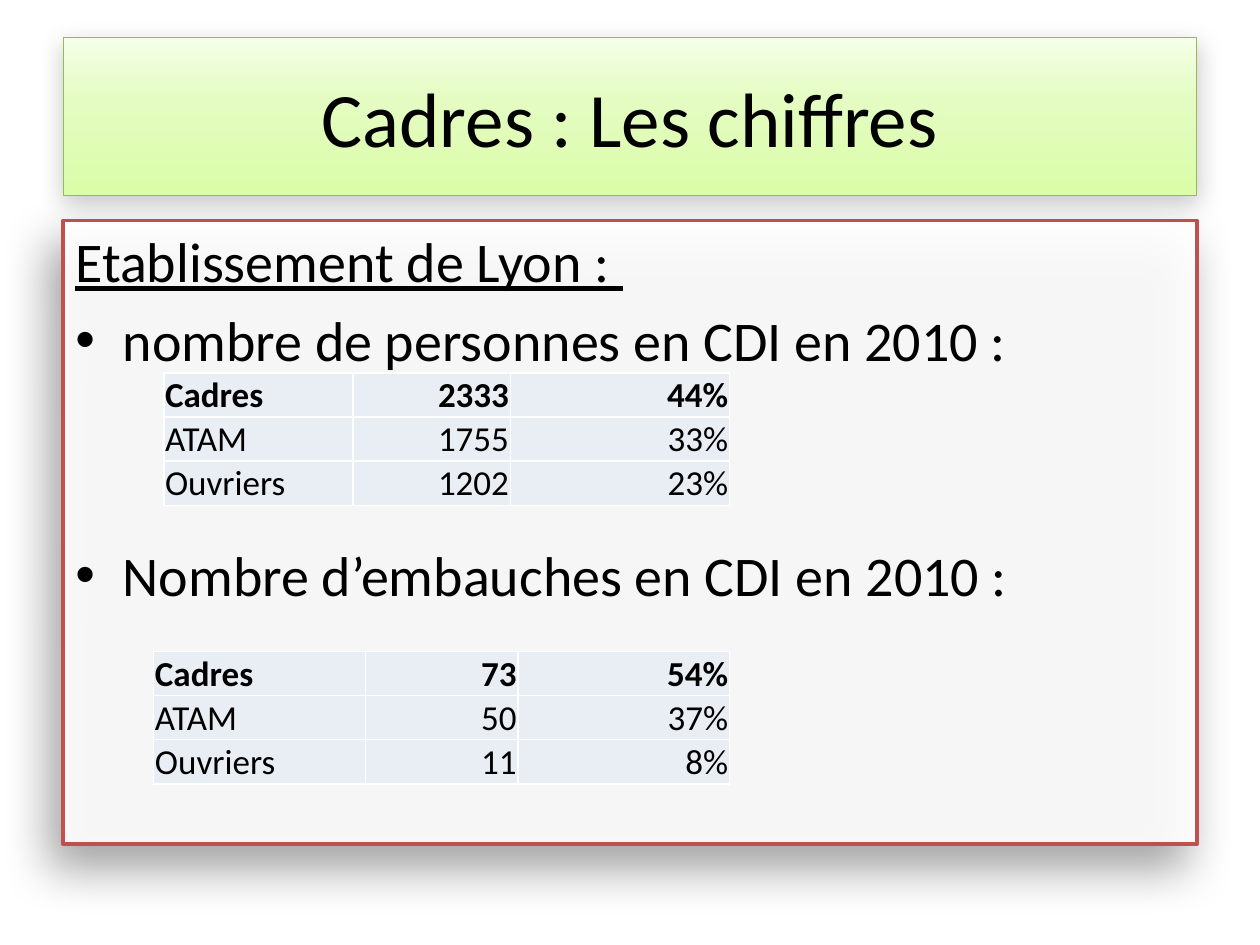
from lxml.etree import SubElement
from pptx import Presentation
from pptx.dml.color import RGBColor as RGB
from pptx.enum.shapes import MSO_SHAPE as Shape
from pptx.enum.text import MSO_ANCHOR as Anchor, PP_ALIGN as Align
from pptx.oxml.ns import qn
from pptx.util import Inches, Pt

TITLE = "Cadres : Les chiffres"
LINES = [
    dict(text="Etablissement de Lyon : ", line=True, before=6.4),
    dict(text="nombre de personnes en CDI en 2010 :", bullet=True, before=6.4),
    dict(text="Nombre d’embauches en CDI en 2010 :", bullet=True, before=96),
]
TABLES = [
    dict(left=1.3, top=2.96, cols=[1.5, 1.25, 1.74], rows=[
        ("Cadres", "2333", "44%"),
        ("ATAM", "1755", "33%"),
        ("Ouvriers", "1202", "23%")]),
    dict(left=1.22, top=5.17, cols=[1.68, 1.21, 1.68], rows=[
        ("Cadres", "73", "54%"),
        ("ATAM", "50", "37%"),
        ("Ouvriers", "11", "8%")]),
]
THEME = dict(
    font="Calibri", ink="000000", paper="FFFFFF", cell="E9EDF4",
    green="98B955", red="C0504D",
    fade=[(0, "F5FFE7"), (40, "E4FCC2"), (100, "DAFDA7")],
    title=44, body=32, table=20,
)
ROW = 0.34
INDENT = 0.375


def tint(node, color, alpha=None):
    """Add a colour, with optional opacity in percent, to an XML node."""
    clr = SubElement(node, qn("a:srgbClr"), val=color)
    if alpha is not None:
        SubElement(clr, qn("a:alpha"), val=str(alpha * 1000))


def write(frame, text, size, align=Align.LEFT, bold=False, line=False,
          bullet=False, before=0):
    """Write one paragraph into a text frame."""
    para = frame.paragraphs[0]
    if para.runs:
        para = frame.add_paragraph()
    para.alignment = align
    para.space_before = Pt(before)
    run = para.add_run()
    run.text = text
    font = run.font
    font.name, font.size = THEME["font"], Pt(size)
    font.bold, font.underline = bold, line
    font.color.rgb = RGB.from_string(THEME["ink"])
    if bullet:
        props = para._p.get_or_add_pPr()
        props.set("marL", str(Inches(INDENT)))
        props.set("indent", str(-Inches(INDENT)))
        SubElement(props, qn("a:buFont"), typeface="Arial")
        SubElement(props, qn("a:buChar"), char="•")


def panel(slide, top, height, edge, width, anchor):
    """Add an outlined full-width rectangle."""
    box = slide.shapes.add_shape(Shape.RECTANGLE, Inches(0.5), Inches(top),
                                 Inches(9), Inches(height))
    box.line.color.rgb = RGB.from_string(edge)
    box.line.width = Pt(width)
    box.text_frame.word_wrap = True
    box.text_frame.vertical_anchor = anchor
    return box


def shade(box, alpha, blur, dist, angle):
    """Give a shape an outer shadow."""
    box.shadow.inherit = False
    effects = box._element.spPr.find(qn("a:effectLst"))
    drop = SubElement(effects, qn("a:outerShdw"), blurRad=str(Pt(blur)),
                      dist=str(Pt(dist)), dir=str(angle * 60000),
                      rotWithShape="0")
    tint(drop, THEME["ink"], alpha)


def grid(slide, left, top, cols, rows):
    """Add a table with white rules and a bold first row."""
    table = slide.shapes.add_table(
        len(rows), len(cols), Inches(left), Inches(top),
        Inches(sum(cols)), Inches(ROW * len(rows))).table
    table.first_row = table.horz_banding = False
    for col, width in zip(table.columns, cols):
        col.width = Inches(width)
    for r, row in enumerate(rows):
        table.rows[r].height = Inches(ROW)
        for c, text in enumerate(row):
            cell = table.cell(r, c)
            cell.margin_left = cell.margin_right = Inches(0.01)
            cell.margin_top, cell.margin_bottom = Inches(0.01), 0
            cell.vertical_anchor = Anchor.BOTTOM if c else Anchor.TOP
            write(cell.text_frame, text, THEME["table"], bold=r == 0,
                  align=Align.RIGHT if c else Align.LEFT)
            props = cell._tc.get_or_add_tcPr()
            for side in ("lnL", "lnR", "lnT", "lnB"):
                rule = SubElement(props, qn("a:" + side), w=str(Pt(1)))
                tint(SubElement(rule, qn("a:solidFill")), THEME["paper"])
            cell.fill.solid()
            cell.fill.fore_color.rgb = RGB.from_string(THEME["cell"])


def main():
    """Build the slide and save it."""
    deck = Presentation()
    deck.slide_width, deck.slide_height = Inches(10), Inches(7.5)
    slide = deck.slides.add_slide(deck.slide_layouts[6])

    head = panel(slide, 0.3, 1.25, THEME["green"], 0.5, Anchor.MIDDLE)
    head.fill.gradient()
    head.fill.gradient_angle = 270
    stops = head._element.spPr.find(qn("a:gradFill")).find(qn("a:gsLst"))
    stops.clear()
    for place, color in THEME["fade"]:
        tint(SubElement(stops, qn("a:gs"), pos=str(place * 1000)), color)
    shade(head, 22, 14, 4, 90)
    write(head.text_frame, TITLE, THEME["title"], align=Align.CENTER)

    body = panel(slide, 1.75, 4.95, THEME["red"], 2, Anchor.TOP)
    fill = body.fill
    fill.solid()
    fill.fore_color.rgb = RGB.from_string(THEME["paper"])
    color = body._element.spPr.find(qn("a:solidFill"))[0]
    SubElement(color, qn("a:alpha"), val="91000")
    shade(body, 40, 27, 15, 118)
    for item in LINES:
        write(body.text_frame, size=THEME["body"], **item)

    for item in TABLES:
        grid(slide, **item)
    deck.save("out.pptx")


if __name__ == "__main__":
    main()
